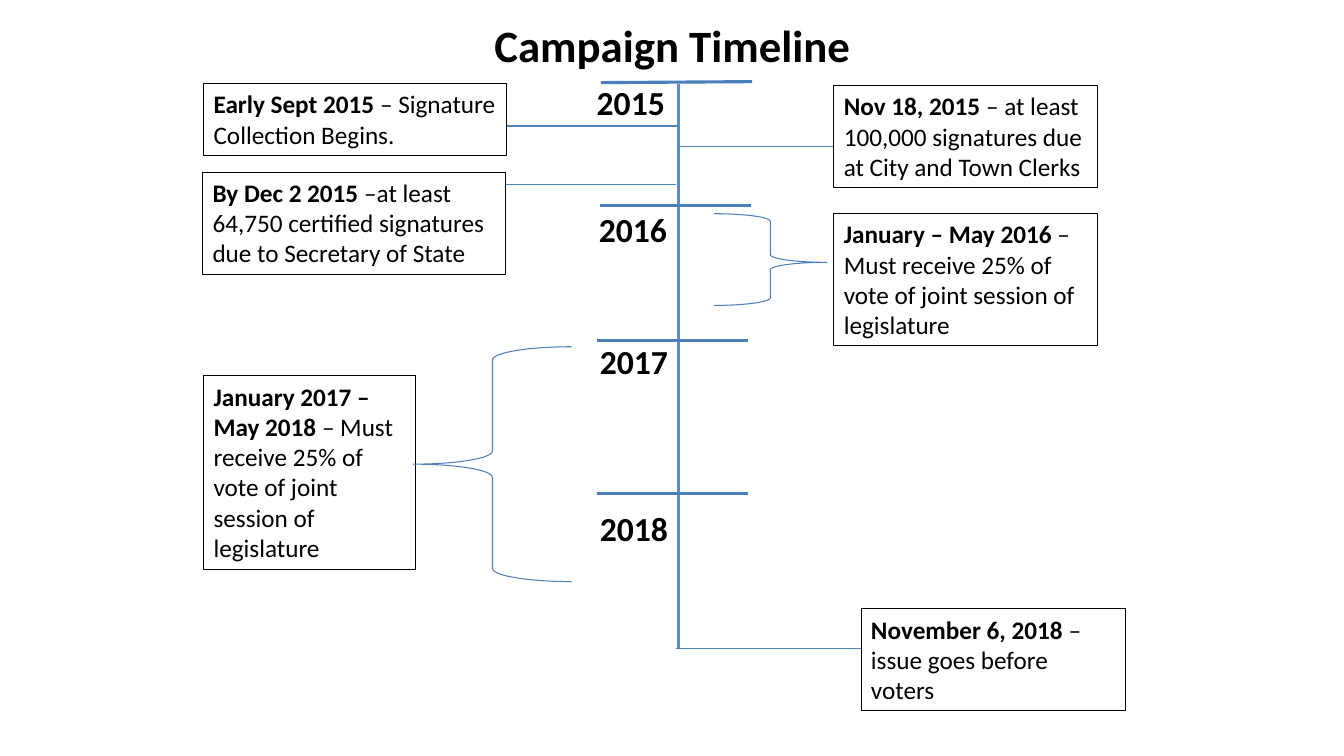
from pptx import Presentation
from pptx.dml.color import RGBColor as RGB
from pptx.enum.shapes import MSO_CONNECTOR as CONN, MSO_SHAPE as SHAPE
from pptx.enum.text import MSO_ANCHOR as ANCHOR, MSO_AUTO_SIZE as FIT, PP_ALIGN as ALIGN
from pptx.oxml.ns import qn
from pptx.util import Inches, Pt
from lxml.etree import SubElement

THEME = {
    "font": "Calibri",
    "title": Pt(32), "year": Pt(24), "body": Pt(18),
    "thin": Pt(0.75), "thick": Pt(2.25),
    "ink": RGB.from_string("000000"), "paper": RGB.from_string("FFFFFF"),
    "axis": RGB.from_string("558ED5"), "link": RGB.from_string("4F81BD"),
    "tick": RGB.from_string("4B7EBC"),
}

prs = Presentation()
prs.slide_width, prs.slide_height = Inches(13.33), Inches(7.5)
s = prs.slides.add_slide(prs.slide_layouts[6])
COL, ROW = prs.slide_width / 133.3, prs.slide_height / 75


def grid(x, y, w, h):
    return [round(v * u) for v, u in zip((x, y, w, h), (COL, ROW, COL, ROW))]


def write(sp, runs, size, **frame):
    tf = sp.text_frame
    for name, value in {"word_wrap": True, "vertical_anchor": ANCHOR.TOP, **frame}.items():
        setattr(tf, name, value)
    p = tf.paragraphs[0]
    p.alignment = ALIGN.LEFT
    for text, bold in runs:
        r = p.add_run()
        r.text = text
        for name, value in {"name": THEME["font"], "size": THEME[size], "bold": bold}.items():
            setattr(r.font, name, value)
        r.font.color.rgb = THEME["ink"]
    return p


title = s.shapes.add_textbox(*grid(21.7, 0.2, 90, 8.4))
write(title, [("Campaign Timeline", True)], "title", vertical_anchor=ANCHOR.MIDDLE).alignment = ALIGN.CENTER

AXIS = 67.3
lines = [
    (AXIS, 8.3, AXIS, 64.3, "axis", "thick"),
    (67.1, 14.5, 85.5, 14.5, "link", "thin"),
    (67, 64.3, 85.4, 64.3, "link", "thin"),
    (48.8, 12.5, AXIS, 12.5, "link", "thin"),
    (48.5, 18.3, 67, 18.3, "link", "thin"),
]
ticks = [(59.6, 8.2, 8.1), (59.5, 20.4, 20.4), (59.2, 33.8, 33.8), (59.2, 49, 49)]
lines += [(x, y1, x + 15, y2, "tick", "thick") for x, y1, y2 in ticks]
for *ends, color, weight in lines:
    ln = s.shapes.add_connector(CONN.STRAIGHT, *grid(*ends))
    ln.line.color.rgb, ln.line.width = THEME[color], THEME[weight]
    SubElement(ln._element.spPr, qn("a:effectLst"))

events = [
    (20.2, 8.3, 30, 7.1, "Early Sept 2015 ", "– Signature Collection Begins."),
    (82.7, 8.5, 26.2, 10.1, "Nov 18, 2015 ", "– at least 100,000 signatures due at City and Town Clerks"),
    (20.1, 17.1, 30, 10.1, "By Dec 2 2015 ", "–at least 64,750 certified signatures due to Secretary of State"),
    (82.7, 21.2, 26.2, 13.1, "January – May 2016 ", "– Must receive 25% of vote of joint session of legislature"),
    (20.2, 37.3, 21, 19.2, "January 2017 – May 2018 ", "– Must receive 25% of vote of joint session of legislature"),
    (85.4, 60.4, 26.2, 10.1, "November 6, 2018 ", "– issue goes before voters"),
]
for *place, date, event in events:
    sp = s.shapes.add_shape(SHAPE.RECTANGLE, *grid(*place))
    sp.shadow.inherit = False
    sp.fill.solid()
    sp.fill.fore_color.rgb = THEME["paper"]
    sp.line.color.rgb, sp.line.width = THEME["ink"], THEME["thin"]
    write(sp, [(date, True), (event, False)], "body", auto_size=FIT.SHAPE_TO_FIT_TEXT)

years = [(58.2, 7.6, 8.8), (58.4, 20.2, 8.8), (58.5, 33.3, 8.8), (58.5, 49.9, 9.2)]
for year, (x, y, w) in enumerate(years, 2015):
    tb = s.shapes.add_textbox(*grid(x, y, w, 5))
    write(tb, [(str(year), True)], "year", word_wrap=year > 2016, auto_size=FIT.SHAPE_TO_FIT_TEXT)

braces = [
    (SHAPE.RIGHT_BRACE, (70.8, 21.2, 11.2, 9.1), 0.53),
    (SHAPE.LEFT_BRACE, (41, 34.4, 15.7, 23.3), 0.5),
]
for kind, place, point in braces:
    sp = s.shapes.add_shape(kind, *grid(*place))
    sp.shadow.inherit = False
    sp.adjustments[1] = point
    sp.fill.background()
    sp.line.color.rgb, sp.line.width = THEME["tick"], THEME["thin"]

prs.save("out.pptx")
